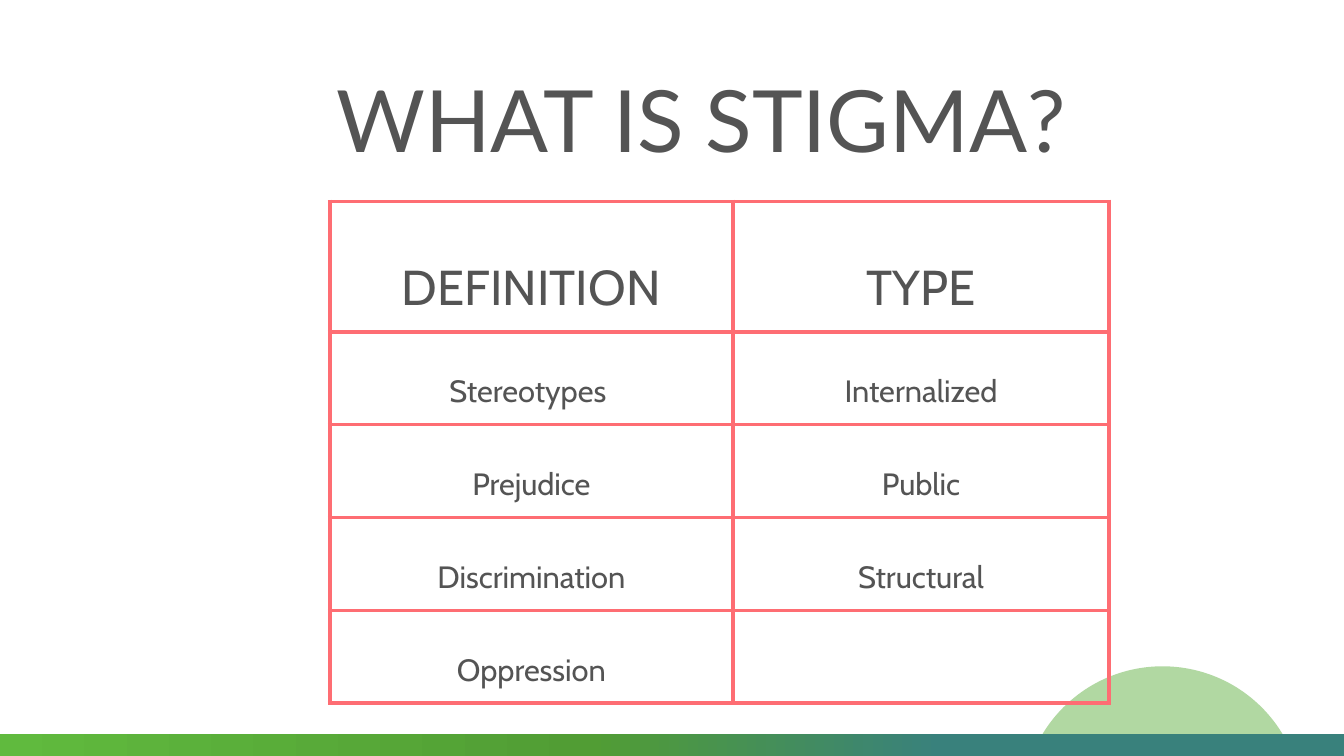
import pptx
import pptx.dml.color
import pptx.enum.shapes
import pptx.enum.text
import pptx.oxml
import pptx.oxml.ns
import pptx.util
from pptx.util import Inches

SLIDE_WIDTH, SLIDE_HEIGHT = 13.33, 7.5
BAR_HEIGHT = 0.22
TITLE_ONLY_LAYOUT = 5
NAMESPACE = pptx.oxml.ns.nsdecls("a")

STIGMA_ROWS = [
    ("DEFINITION", "TYPE"),
    ("Stereotypes ", "Internalized"),
    ("Prejudice", "Public"),
    ("Discrimination", "Structural"),
    ("Oppression", ""),
]


def color(hex_string):
    return pptx.dml.color.RGBColor.from_string(hex_string)


def write_text(text_frame, text, *, font, size, line_height, text_color):
    """Put one centred paragraph with a fixed line height (points) in the frame."""
    paragraph = text_frame.paragraphs[0]
    paragraph.alignment = pptx.enum.text.PP_ALIGN.CENTER
    paragraph.line_spacing = pptx.util.Pt(line_height)
    run = paragraph.add_run()
    run.text = text
    run.font.name = font
    run.font.size = pptx.util.Pt(size)
    run.font.color.rgb = color(text_color)


class SlideBuilder:
    """Holds the style and the current slide."""

    ink = "545454"
    border_color = "FE6D73"
    border_points = 3
    title_font = "Lato"
    body_font = "Cabin"
    cell_margin = 0.14

    def __init__(self, presentation):
        layout = presentation.slide_layouts[TITLE_ONLY_LAYOUT]
        self.slide = presentation.slides.add_slide(layout)
        self.slide.background.fill.solid()
        self.slide.background.fill.fore_color.rgb = color("FFFFFF")

    def add_shape(self, kind, left, top, width, height):
        shape = self.slide.shapes.add_shape(
            kind, Inches(left), Inches(top), Inches(width), Inches(height))
        shape.shadow.inherit = False
        shape.line.fill.background()
        return shape

    def add_circle(self, left, top, diameter, fill, opacity):
        circle = self.add_shape(
            pptx.enum.shapes.MSO_SHAPE.OVAL, left, top, diameter, diameter)
        circle.fill.solid()
        circle.fill.fore_color.rgb = color(fill)
        fill_color = circle.element.spPr.find(".//" + pptx.oxml.ns.qn("a:srgbClr"))
        fill_color.append(pptx.oxml.parse_xml(
            f'<a:alpha {NAMESPACE} val="{opacity * 1000}"/>'))

    def add_gradient_bar(self, left, top, width, height, stops, angle):
        """Draw a bar whose stops are (percent, hex) pairs, angle in degrees."""
        bar = self.add_shape(
            pptx.enum.shapes.MSO_SHAPE.RECTANGLE, left, top, width, height)
        stop_xml = "".join(
            f'<a:gs pos="{percent * 1000}"><a:srgbClr val="{stop}"/></a:gs>'
            for percent, stop in stops)
        gradient = pptx.oxml.parse_xml(
            f'<a:gradFill {NAMESPACE} rotWithShape="1"><a:gsLst>{stop_xml}</a:gsLst>'
            f'<a:lin ang="{angle * 60000}" scaled="0"/></a:gradFill>')
        bar.element.spPr.find(pptx.oxml.ns.qn("a:prstGeom")).addnext(gradient)

    def set_title(self, text, left, top, width, height):
        title = self.slide.shapes.title
        title.left, title.top = Inches(left), Inches(top)
        title.width, title.height = Inches(width), Inches(height)
        frame = title.text_frame
        frame.margin_left = frame.margin_right = 0
        frame.margin_top = frame.margin_bottom = 0
        frame.word_wrap = True
        frame.vertical_anchor = pptx.enum.text.MSO_ANCHOR.TOP
        frame.auto_size = pptx.enum.text.MSO_AUTO_SIZE.SHAPE_TO_FIT_TEXT
        write_text(frame, text, font=self.title_font, size=61.3,
                   line_height=85.9, text_color=self.ink)

    def add_table(self, rows, left, top, column_widths, row_heights):
        table = self.slide.shapes.add_table(
            len(rows), len(column_widths), Inches(left), Inches(top),
            Inches(sum(column_widths)), Inches(sum(row_heights))).table
        table.first_row = table.horz_banding = False
        for column, width in zip(table.columns, column_widths):
            column.width = Inches(width)
        for row, height in zip(table.rows, row_heights):
            row.height = Inches(height)
        for row_index, texts in enumerate(rows):
            size, line_height = (35, 72.8) if row_index == 0 else (22, 46.2)
            for column_index, text in enumerate(texts):
                cell = table.cell(row_index, column_index)
                self.format_cell(cell)
                if text:
                    write_text(cell.text_frame, text, font=self.body_font, size=size,
                               line_height=line_height, text_color=self.ink)

    def format_cell(self, cell):
        cell.fill.background()
        cell.vertical_anchor = pptx.enum.text.MSO_ANCHOR.MIDDLE
        cell.margin_left = cell.margin_right = Inches(self.cell_margin)
        cell.margin_top = cell.margin_bottom = Inches(self.cell_margin)
        properties = cell._tc.get_or_add_tcPr()
        for position, side in enumerate(("lnL", "lnR", "lnT", "lnB")):
            properties.insert(position, pptx.oxml.parse_xml(
                f'<a:{side} {NAMESPACE} w="{pptx.util.Pt(self.border_points)}">'
                f'<a:solidFill><a:srgbClr val="{self.border_color}"/></a:solidFill>'
                f'</a:{side}>'))


def main():
    presentation = pptx.Presentation()
    presentation.slide_width = Inches(SLIDE_WIDTH)
    presentation.slide_height = Inches(SLIDE_HEIGHT)

    builder = SlideBuilder(presentation)
    builder.add_circle(10.14, 6.61, 2.78, fill="64B246", opacity=50)
    builder.add_gradient_bar(
        0, SLIDE_HEIGHT - BAR_HEIGHT, SLIDE_WIDTH, BAR_HEIGHT,
        stops=[(30, "39817C"), (56, "519D34"), (100, "60BA3E")], angle=180)
    builder.add_table(STIGMA_ROWS, 3.27, 2, column_widths=[4, 3.73],
                      row_heights=[1.14] + [0.79] * (len(STIGMA_ROWS) - 1))
    builder.set_title("WHAT IS STIGMA? ", 3.09, 0.49, 7.95, 1.1)

    presentation.save("out.pptx")


if __name__ == "__main__":
    main()
